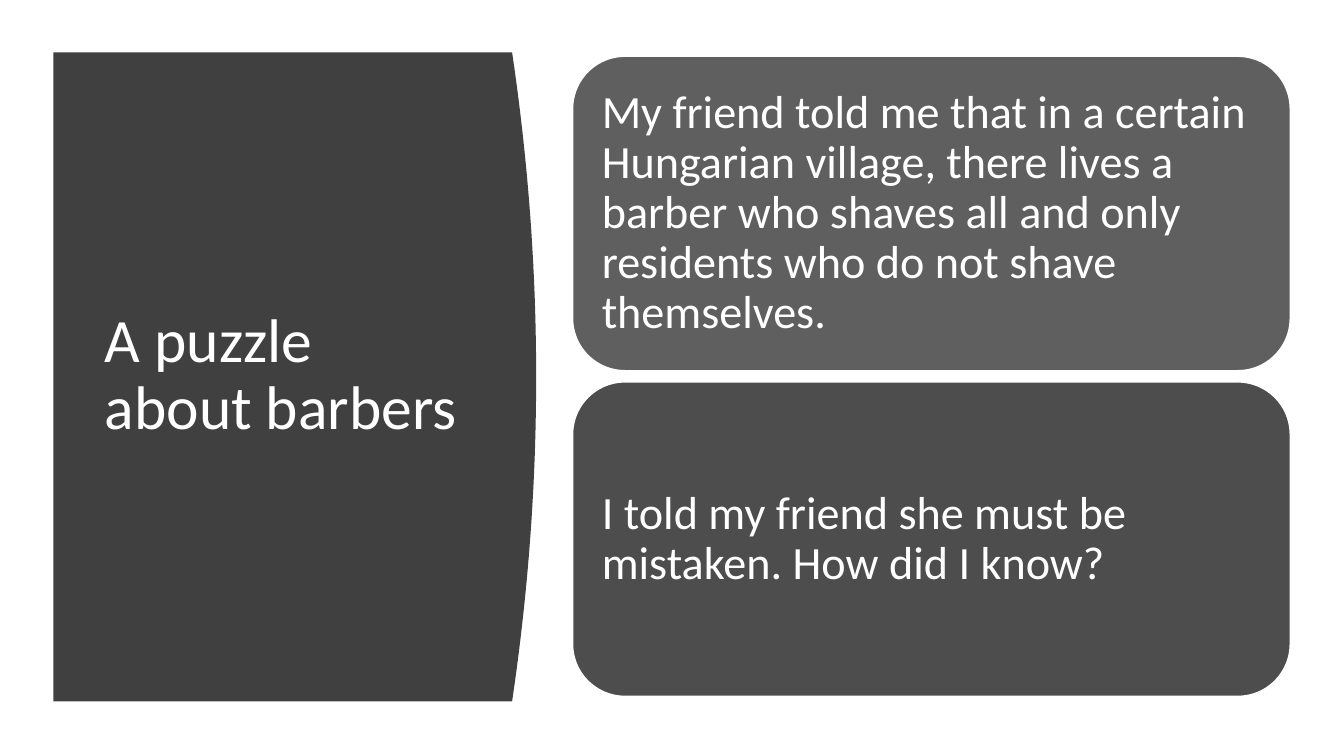
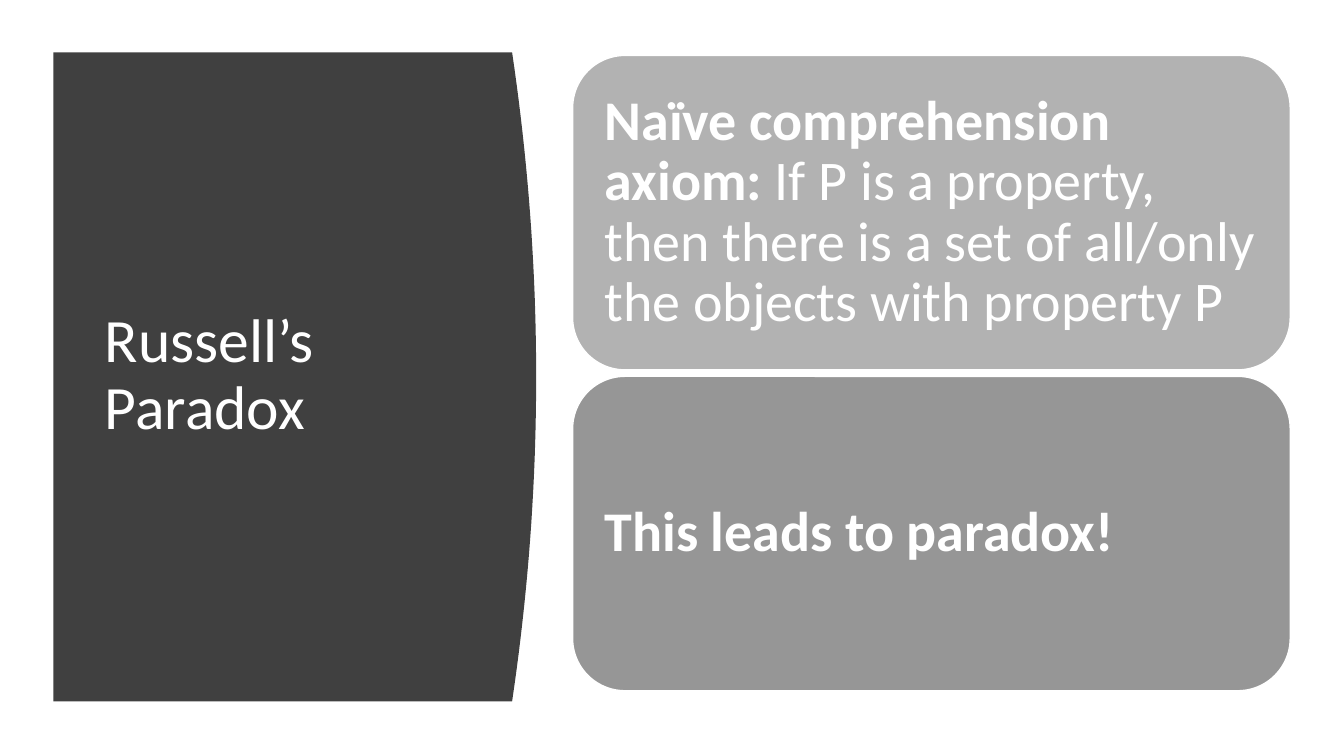
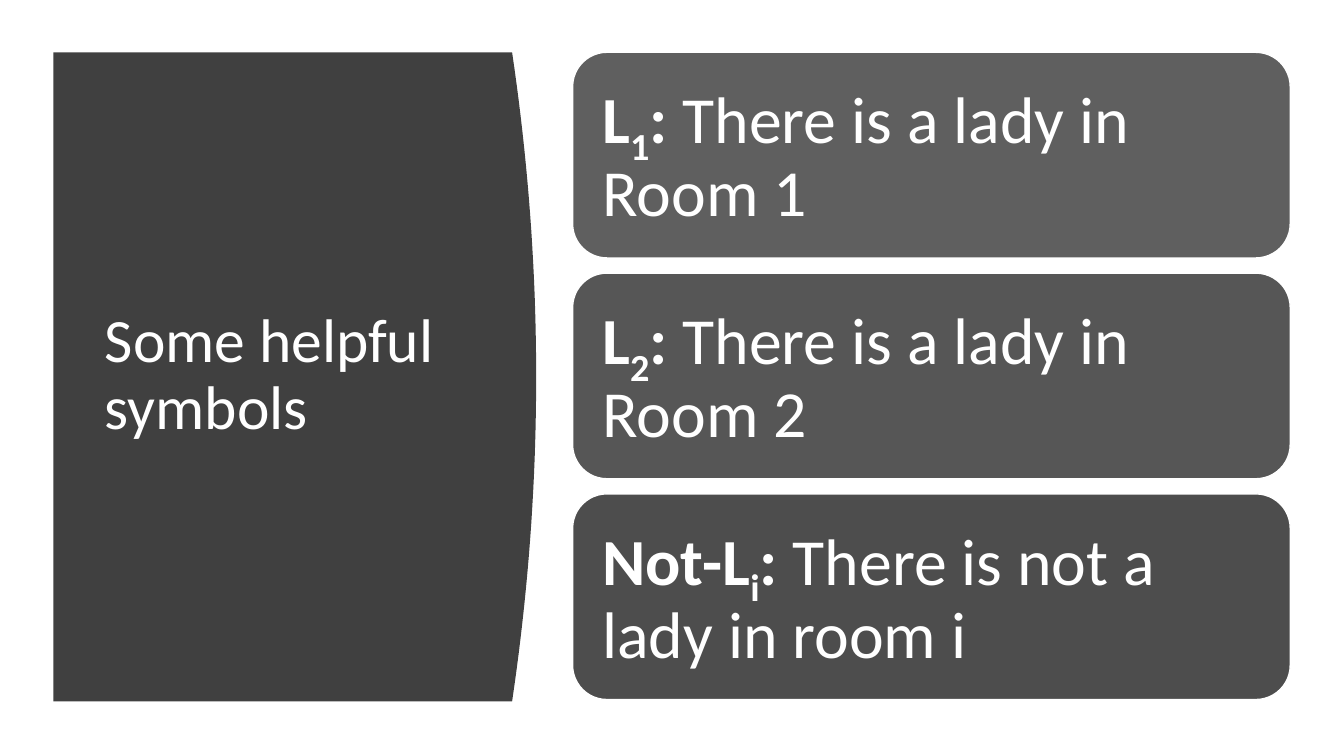
from dataclasses import dataclass

import pptx
import pptx.dml.color
import pptx.enum.shapes
import pptx.enum.text
import pptx.presentation
import pptx.shapes.autoshape
import pptx.slide
import pptx.text.text
import pptx.util

Pt = pptx.util.Pt
RGBColor = pptx.dml.color.RGBColor

WHITE = RGBColor(0xFF, 0xFF, 0xFF)
PANEL_GREY = RGBColor(0x40, 0x40, 0x40)
DARK_GREY = RGBColor(0x4D, 0x4D, 0x4D)
MIDDLE_GREY = RGBColor(0x56, 0x56, 0x56)
SOFT_GREY = RGBColor(0x5F, 0x5F, 0x5F)
STEEL_GREY = RGBColor(0x96, 0x96, 0x96)
LIGHT_GREY = RGBColor(0xB2, 0xB2, 0xB2)

FONT = "Calibri"
TITLE_SIZE = 44
LINE_SPACING = 0.9
TITLE_ONLY = 5

PANEL_LEFT, PANEL_TOP, PANEL_BOTTOM = 38.2, 37.4, 501.1
PANEL_CORNER, PANEL_BULGE, PANEL_STEPS = 365.8, 17.2, 40
CARD_LEFT, CARD_WIDTH = 409, 512.6
MARGIN_PER_SIZE = 0.3


@dataclass(frozen=True)
class Span:
    text: str
    bold: bool = False
    subscript: bool = False


@dataclass(frozen=True)
class Card:
    fill: RGBColor
    spans: tuple[Span, ...]


@dataclass(frozen=True)
class Page:
    title: str
    cards: tuple[Card, ...]
    top: float
    height: float
    gap: float
    size: float


def symbol(fill: RGBColor, letter: str, index: str, meaning: str) -> Card:
    return Card(fill, (Span(letter, True), Span(index, True, True), Span(": ", True), Span(meaning)))


PAGES = (
    Page("A puzzle about barbers", (
        Card(SOFT_GREY, (Span(
            "My friend told me that in a certain Hungarian village, there lives a barber "
            "who shaves all and only residents who do not shave themselves."),)),
        Card(DARK_GREY, (Span("I told my friend she must be mistaken. How did I know?"),)),
    ), top=40.2, height=224.6, gap=8, size=33),
    Page("Russell’s Paradox", (
        Card(LIGHT_GREY, (
            Span("Naïve comprehension axiom: ", True),
            Span("If P is a property, then there is a set of all/only the objects with property P"))),
        Card(STEEL_GREY, (Span("This leads to paradox!", True),)),
    ), top=39.6, height=224.6, gap=4.6, size=40),
    Page("Some helpful symbols", (
        symbol(SOFT_GREY, "L", "1", "There is a lady in Room 1"),
        symbol(MIDDLE_GREY, "L", "2", "There is a lady in Room 2"),
        symbol(DARK_GREY, "Not-L", "i", "There is not a lady in room i"),
    ), top=37.4, height=146.9, gap=10.8, size=47),
)


def format_text(frame: pptx.text.text.TextFrame, size: float) -> pptx.text.text._Paragraph:
    frame.word_wrap = True
    frame.auto_size = pptx.enum.text.MSO_AUTO_SIZE.NONE
    frame.vertical_anchor = pptx.enum.text.MSO_ANCHOR.MIDDLE
    paragraph = frame.paragraphs[0]
    paragraph.alignment = pptx.enum.text.PP_ALIGN.LEFT
    paragraph.line_spacing = LINE_SPACING
    paragraph.font.name = FONT
    paragraph.font.size = Pt(size)
    paragraph.font.color.rgb = WHITE
    return paragraph


def fill_shape(shape: pptx.shapes.autoshape.Shape, color: RGBColor) -> None:
    shape.shadow.inherit = False
    shape.fill.solid()
    shape.fill.fore_color.rgb = color


def draw_panel(slide: pptx.slide.Slide) -> None:
    middle = (PANEL_TOP + PANEL_BOTTOM) / 2
    half = (PANEL_BOTTOM - PANEL_TOP) / 2
    offsets = [2 * step / PANEL_STEPS - 1 for step in range(PANEL_STEPS + 1)]
    edge = [(Pt(PANEL_CORNER + PANEL_BULGE * (1 - offset ** 2)), Pt(middle + half * offset))
            for offset in offsets]
    builder = slide.shapes.build_freeform(Pt(PANEL_LEFT), Pt(PANEL_TOP))
    builder.add_line_segments(edge + [(Pt(PANEL_LEFT), Pt(PANEL_BOTTOM))], close=True)
    panel = builder.convert_to_shape()
    fill_shape(panel, PANEL_GREY)
    panel.line.fill.background()


def place_title(slide: pptx.slide.Slide, text: str) -> None:
    title = slide.shapes.title
    title.left, title.top, title.width, title.height = Pt(67.7), Pt(79.9), Pt(269.3), Pt(377.3)
    title.text_frame.text = text
    format_text(title.text_frame, TITLE_SIZE)
    title.element.getparent().append(title.element)


def draw_card(slide: pptx.slide.Slide, card: Card, top: float, height: float, size: float) -> None:
    shape = slide.shapes.add_shape(
        pptx.enum.shapes.MSO_SHAPE.ROUNDED_RECTANGLE,
        Pt(CARD_LEFT), Pt(top), Pt(CARD_WIDTH), Pt(height))
    fill_shape(shape, card.fill)
    shape.line.color.rgb = WHITE
    shape.line.width = Pt(1)
    frame = shape.text_frame
    margin = Pt(size * MARGIN_PER_SIZE)
    frame.margin_left = frame.margin_top = frame.margin_right = frame.margin_bottom = margin
    paragraph = format_text(frame, size)
    for span in card.spans:
        run = paragraph.add_run()
        run.text = span.text
        run.font.bold = span.bold
        if span.subscript:
            run.font._element.set("baseline", "-25000")


def draw_page(presentation: pptx.presentation.Presentation, page: Page) -> None:
    slide = presentation.slides.add_slide(presentation.slide_layouts[TITLE_ONLY])
    draw_panel(slide)
    place_title(slide, page.title)
    for index, card in enumerate(page.cards):
        draw_card(slide, card, page.top + index * (page.height + page.gap), page.height, page.size)


def main() -> None:
    presentation = pptx.Presentation()
    presentation.slide_width = Pt(960)
    presentation.slide_height = Pt(540)
    for page in PAGES:
        draw_page(presentation, page)
    presentation.save("out.pptx")


if __name__ == "__main__":
    main()
